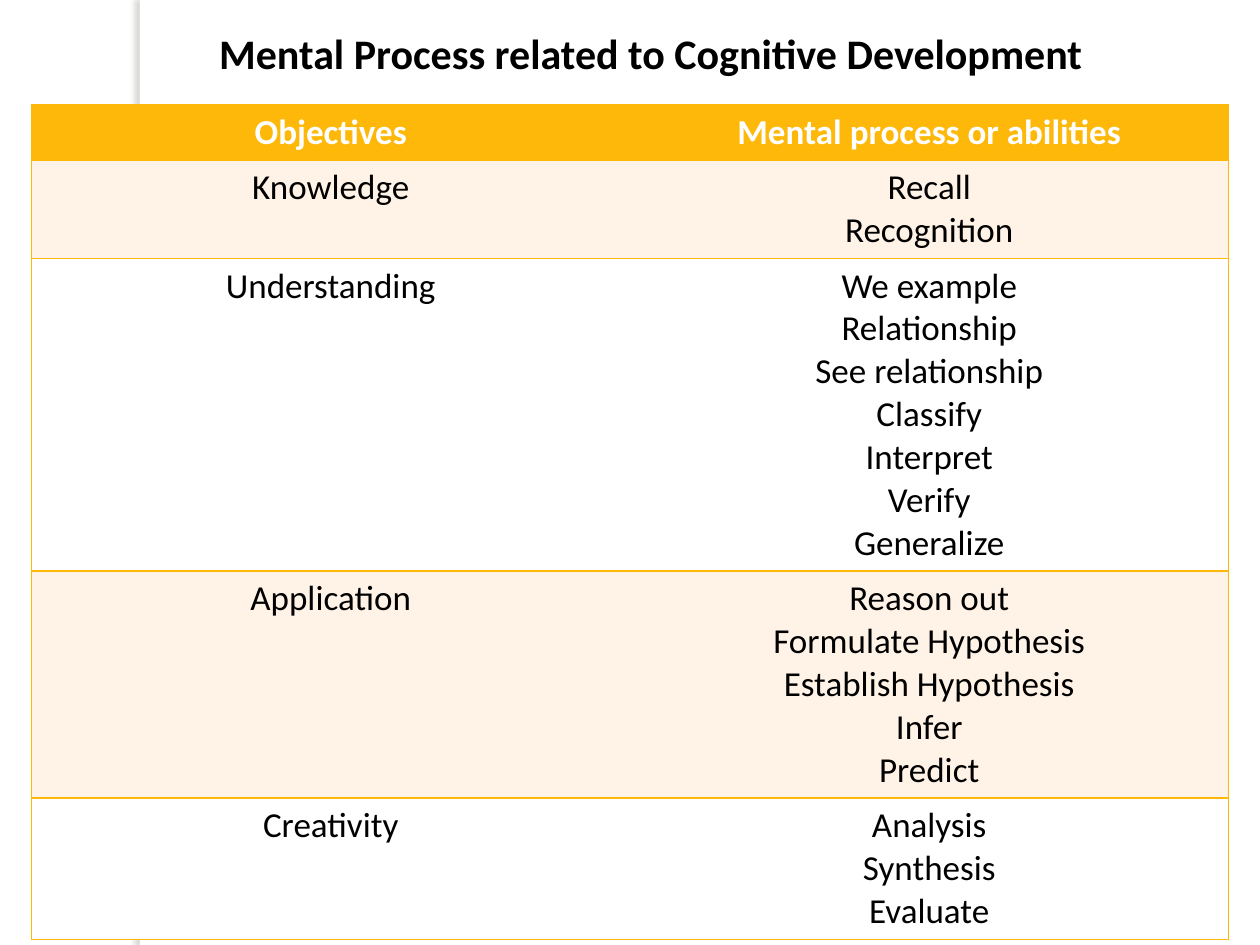
from dataclasses import dataclass

from lxml.etree import SubElement
from pptx import Presentation
from pptx.dml.color import RGBColor
from pptx.enum.shapes import MSO_SHAPE
from pptx.enum.text import MSO_AUTO_SIZE, PP_ALIGN
from pptx.oxml.ns import qn
from pptx.util import Inches, Pt

COLOURS = {
    "white": "FFFFFF",
    "black": "000000",
    "amber": "FEB80A",
    "cream": "FFF3E7",
    "shadow": "736F63",
}
FONT = "Calibri"
LINE_HEIGHT = 0.34
CELL_PADDING = 0.1


@dataclass
class Row:
    objective: str
    abilities: list[str]
    fill: str
    text_colour: str = "black"
    bold: bool = False


ROWS = [
    Row("Objectives", ["Mental process or abilities"], "amber", "white", True),
    Row("Knowledge", ["Recall", "Recognition"], "cream"),
    Row("Understanding", ["We example", "Relationship", "See relationship", "Classify",
                          "Interpret", "Verify", "Generalize"], "white"),
    Row("Application", ["Reason out", "Formulate Hypothesis", "Establish Hypothesis",
                        "Infer", "Predict"], "cream"),
    Row("Creativity", ["Analysis", "Synthesis", "Evaluate"], "white"),
]


def rgb(name: str) -> RGBColor:
    return RGBColor.from_string(COLOURS[name])


def write_lines(frame, lines: list[str], size: int, colour: str, bold: bool) -> None:
    for index, line in enumerate(lines):
        para = frame.add_paragraph() if index else frame.paragraphs[0]
        para.alignment = PP_ALIGN.CENTER
        span = para.add_run()
        span.text = line
        span.font.name = FONT
        span.font.size = Pt(size)
        span.font.bold = bold
        span.font.color.rgb = rgb(colour)


def set_borders(cell, open_side: str) -> None:
    """Outline the cell in amber, leaving the side shared with its neighbour open."""
    properties = cell._tc.get_or_add_tcPr()
    for side in ("L", "R", "T", "B"):
        line = SubElement(properties, qn(f"a:ln{side}"), w=str(Pt(1)))
        if side == open_side:
            SubElement(line, qn("a:noFill"))
        else:
            fill = SubElement(line, qn("a:solidFill"))
            SubElement(fill, qn("a:srgbClr"), val=COLOURS["amber"])


def add_side_strip(page) -> None:
    """Draw the white strip whose soft shadow falls to the left."""
    strip = page.shapes.add_shape(MSO_SHAPE.RECTANGLE, Inches(1.11), Inches(0),
                                  Inches(0.08), Inches(7.5))
    strip.fill.solid()
    strip.fill.fore_color.rgb = rgb("white")
    strip.line.fill.background()
    strip.shadow.inherit = False
    effects = strip._element.spPr.find(qn("a:effectLst"))
    shadow = SubElement(effects, qn("a:outerShdw"), blurRad=str(Pt(3)), dist=str(Pt(3)),
                        dir="10800000", algn="tl", rotWithShape="0")
    colour = SubElement(shadow, qn("a:srgbClr"), val=COLOURS["shadow"])
    SubElement(colour, qn("a:alpha"), val="25000")


def add_objectives_table(page) -> None:
    heights = [Inches(LINE_HEIGHT * len(row.abilities) + CELL_PADDING) for row in ROWS]
    table = page.shapes.add_table(len(ROWS), 2, Inches(0.25), Inches(0.83),
                                  Inches(9.5), sum(heights)).table
    table.horz_banding = False
    for index, (row, height) in enumerate(zip(ROWS, heights)):
        table.rows[index].height = height
        columns = (([row.objective], "R"), (row.abilities, "L"))
        for column, (lines, open_side) in enumerate(columns):
            cell = table.cell(index, column)
            set_borders(cell, open_side)
            cell.fill.solid()
            cell.fill.fore_color.rgb = rgb(row.fill)
            write_lines(cell.text_frame, lines, 20, row.text_colour, row.bold)


def add_title(page) -> None:
    box = page.shapes.add_textbox(Inches(0.58), Inches(0.17), Inches(9.17), Inches(0.5))
    box.text_frame.word_wrap = True
    box.text_frame.auto_size = MSO_AUTO_SIZE.SHAPE_TO_FIT_TEXT
    write_lines(box.text_frame, ["Mental Process related to Cognitive Development"],
                24, "black", True)


def main() -> None:
    deck = Presentation()
    deck.slide_width, deck.slide_height = Inches(10), Inches(7.5)
    page = deck.slides.add_slide(deck.slide_layouts[6])
    add_side_strip(page)
    add_objectives_table(page)
    add_title(page)
    deck.save("out.pptx")


if __name__ == "__main__":
    main()
